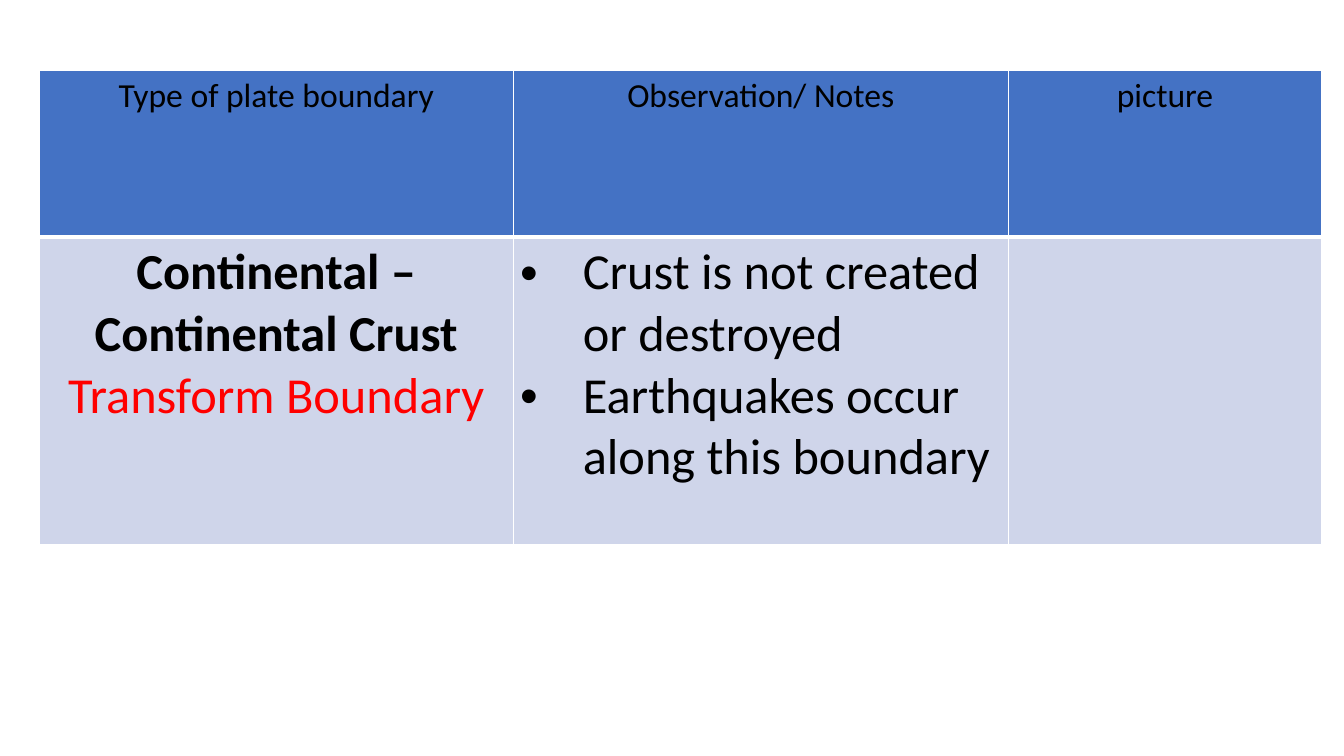
import pptx
import pptx.util
import pptx.dml.color
import pptx.enum.text
import lxml.etree
from pptx.util import Inches

# Content: each cell is a list of (text, size, bold, colour, bullet)
HEADS = ["Type of plate boundary", "Observation/ Notes", "picture"]
BODY = [
    [("Continental – Continental Crust", 36, True, "000000", False),
     ("Transform Boundary", 36, False, "FF0000", False)],
    [("Crust is not created or destroyed", 36, False, "000000", True),
     ("Earthquakes occur along this boundary", 36, False, "000000", True)],
    [],
]
ROWS = [[[(head, 24, False, "000000", False)] for head in HEADS], BODY]
FILLS = ["4472C4", "CFD5EA"]
BASES = [3, 1]  # bottom border of each row, in points
WIDTHS = [4.7, 4.91, 3.11]
HEIGHTS = [1.65, 3.05]
LEFT, TOP = 0.39, 0.7
INDENT = 0.62


def color(code):
    return pptx.dml.color.RGBColor.from_string(code)


def add_node(parent, tag, **attrs):
    name = pptx.oxml.ns.qn("a:" + tag)
    return lxml.etree.SubElement(parent, name, attrs)


def set_edges(cell, base):
    props = cell._tc.get_or_add_tcPr()
    edges = [("lnL", 1), ("lnR", 1), ("lnT", 1), ("lnB", base)]
    for spot, (tag, width) in enumerate(edges):
        line = add_node(props, tag, w=str(pptx.util.Pt(width)))
        add_node(add_node(line, "solidFill"), "srgbClr", val="FFFFFF")
        props.insert(spot, line)


def set_bullet(para):
    props = para._p.get_or_add_pPr()
    props.set("marL", str(Inches(INDENT)))
    props.set("indent", str(Inches(-INDENT)))
    add_node(props, "buFont", typeface="Arial")
    add_node(props, "buChar", char="•")


def fill_cell(cell, lines):
    frame = cell.text_frame
    for num, (text, size, bold, code, bullet) in enumerate(lines):
        para = frame.add_paragraph() if num else frame.paragraphs[0]
        para.text = text
        font = para.font
        font.name, font.size, font.bold = "Calibri", pptx.util.Pt(size), bold
        font.color.rgb = color(code)
        if bullet:
            para.alignment = pptx.enum.text.PP_ALIGN.LEFT
            set_bullet(para)
        else:
            para.alignment = pptx.enum.text.PP_ALIGN.CENTER


# Slide
deck = pptx.Presentation()
deck.slide_width, deck.slide_height = Inches(13.33), Inches(7.5)
slide = deck.slides.add_slide(deck.slide_layouts[6])

# Table
table = slide.shapes.add_table(
    len(ROWS), len(WIDTHS), Inches(LEFT), Inches(TOP),
    Inches(sum(WIDTHS)), Inches(sum(HEIGHTS))).table
for col, width in zip(table.columns, WIDTHS):
    col.width = Inches(width)
for row, height in zip(table.rows, HEIGHTS):
    row.height = Inches(height)

# Cells
for r, (row, code, base) in enumerate(zip(ROWS, FILLS, BASES)):
    for c, lines in enumerate(row):
        cell = table.cell(r, c)
        cell.margin_left = cell.margin_right = Inches(0.07)
        cell.fill.solid()
        cell.fill.fore_color.rgb = color(code)
        set_edges(cell, base)
        fill_cell(cell, lines)

deck.save("out.pptx")
